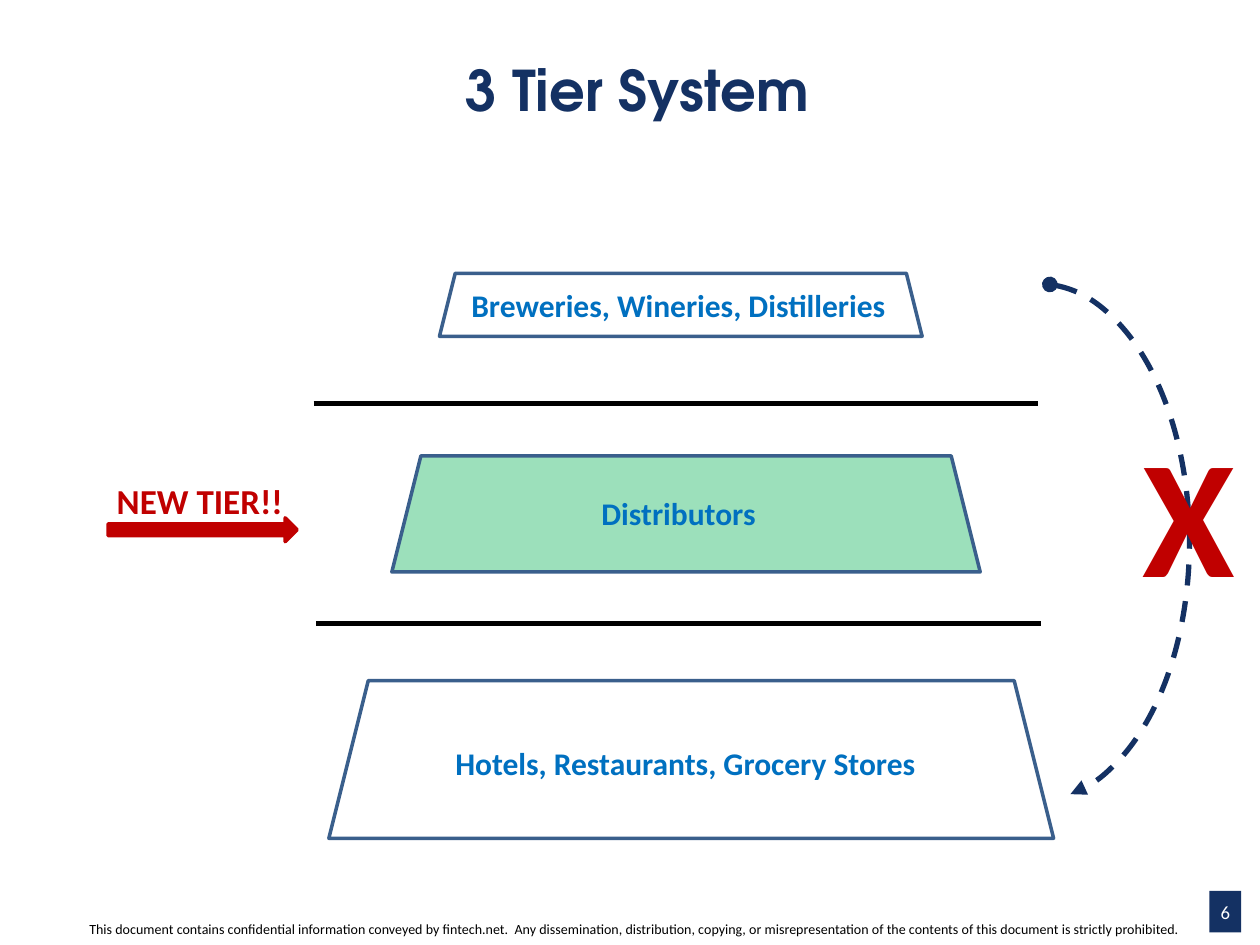
from lxml import etree
from pptx import Presentation
from pptx.dml.color import RGBColor
from pptx.enum.dml import MSO_LINE as Dash
from pptx.enum.shapes import MSO_CONNECTOR as Conn, MSO_SHAPE as Geo
from pptx.enum.text import MSO_ANCHOR as Anchor, PP_ALIGN as Align
from pptx.oxml.ns import qn
from pptx.util import Cm, Pt

NAVY, RED, BLUE, EDGE = "143163", "C00000", "0070C0", "3A5F8C"
FOOT = ("This document contains confidential information conveyed by fintech.net.  "
        "Any dissemination, distribution, copying, or misrepresentation of the "
        "contents of this document is strictly prohibited.")


def paint(target, code):
    target.rgb = RGBColor.from_string(code)


def write(shape, text, size, color, bold=True, font="Calibri",
          align=Align.CENTER, wrap=True, anchor=Anchor.TOP, pad=(0.25, 0.13)):
    frame = shape.text_frame
    frame.word_wrap = wrap
    frame.vertical_anchor = anchor
    frame.margin_left = frame.margin_right = Cm(pad[0])
    frame.margin_top = frame.margin_bottom = Cm(pad[1])
    para = frame.paragraphs[0]
    para.alignment = align
    run = para.add_run()
    run.text = text
    run.font.name, run.font.size, run.font.bold = font, Pt(size), bold
    paint(run.font.color, color)


def label(slide, box, text, size, color, **style):
    write(slide.shapes.add_textbox(*map(Cm, box)), text, size, color, **style)


def draw(slide, kind, box, fill=None, edge=None, width=2):
    shape = slide.shapes.add_shape(kind, *map(Cm, box))
    shape.shadow.inherit = False
    if fill:
        shape.fill.solid()
        paint(shape.fill.fore_color, fill)
    else:
        shape.fill.background()
    if edge:
        paint(shape.line.color, edge)
        shape.line.width = Pt(width)
    else:
        shape.line.fill.background()
    return shape


def fade(shape, share):
    """Set the opacity of a solid fill, in percent."""
    color = shape.fill._xPr.find(qn("a:solidFill"))[0]
    etree.SubElement(color, qn("a:alpha"), val=str(share * 1000))


def tier(slide, box, text, inset, span, drop, fill=None, wrap=False):
    """Trapezoid with a label of width span, offset by inset and drop."""
    left, top, _, _ = box
    shape = draw(slide, Geo.TRAPEZOID, box, fill, EDGE)
    if fill:
        fade(shape, 39)
    label(slide, (left + inset, top + drop, span, 1.02), text, 18, BLUE, wrap=wrap)


def rule(slide, left, top, width):
    line = slide.shapes.add_connector(
        Conn.STRAIGHT, Cm(left), Cm(top), Cm(left + width), Cm(top))
    paint(line.line.color, "000000")
    line.line.width = Pt(3)
    etree.SubElement(line._element.spPr, qn("a:effectLst"))


def bypass(slide, box):
    """Dashed arc around the middle tier, crossed out."""
    left, top, _, _ = box
    arc = draw(slide, Geo.ARC, box, edge=NAVY, width=3)
    arc.adjustments[0], arc.adjustments[1] = 163.56, 49.63
    arc.line.dash_style = Dash.DASH
    ends = arc.line._get_or_add_ln()
    etree.SubElement(ends, qn("a:headEnd"), type="oval")
    etree.SubElement(ends, qn("a:tailEnd"), type="triangle")
    label(slide, (left + 4.9, top + 2.41, 2.39, 4.37), "X", 96, RED,
          align=Align.LEFT, wrap=False)


def callout(slide, box):
    left, top, width, _ = box
    label(slide, (left, top, width, 1.12), "NEW TIER!!", 20, RED)
    draw(slide, Geo.RIGHT_ARROW, (left + 0.27, top + 0.91, 3.81, 0.48), RED, RED)


def footer(slide, box):
    left, top, _, _ = box
    label(slide, box, FOOT, 8, "000000", bold=False)
    badge = draw(slide, Geo.RECTANGLE, (left + 23.64, top - 0.46, 0.64, 0.84), NAVY)
    write(badge, "6", 10.7, "FFFFFF", bold=False, anchor=Anchor.MIDDLE, pad=(0, 0))


def main():
    deck = Presentation()
    deck.slide_width, deck.slide_height = Cm(25.4), Cm(19.05)
    slide = deck.slides.add_slide(deck.slide_layouts[6])
    label(slide, (1.42, 0.2, 22.86, 3.18), "3 Tier System", 32, NAVY,
          font="TeX Gyre Adventor", anchor=Anchor.MIDDLE, pad=(0.33, 0.18))
    tier(slide, (8.86, 5.51, 9.73, 1.27), "Breweries, Wineries, Distilleries",
         0.36, 8.92, 0.13)
    tier(slide, (7.9, 9.19, 11.86, 2.34), "Distributors", 0.84, 9.88, 0.64,
         fill="00B050", wrap=True)
    tier(slide, (6.63, 13.72, 14.61, 3.18), "Hotels, Restaurants, Grocery Stores",
         2.29, 9.8, 1.14)
    rule(slide, 6.32, 8.13, 14.61)
    rule(slide, 6.38, 12.57, 14.61)
    bypass(slide, (17.88, 5.72, 6.1, 10.41))
    callout(slide, (1.91, 9.53, 4.24, 1.39))
    footer(slide, (0.74, 18.42, 24.13, 0.61))
    deck.save("out.pptx")


if __name__ == "__main__":
    main()
